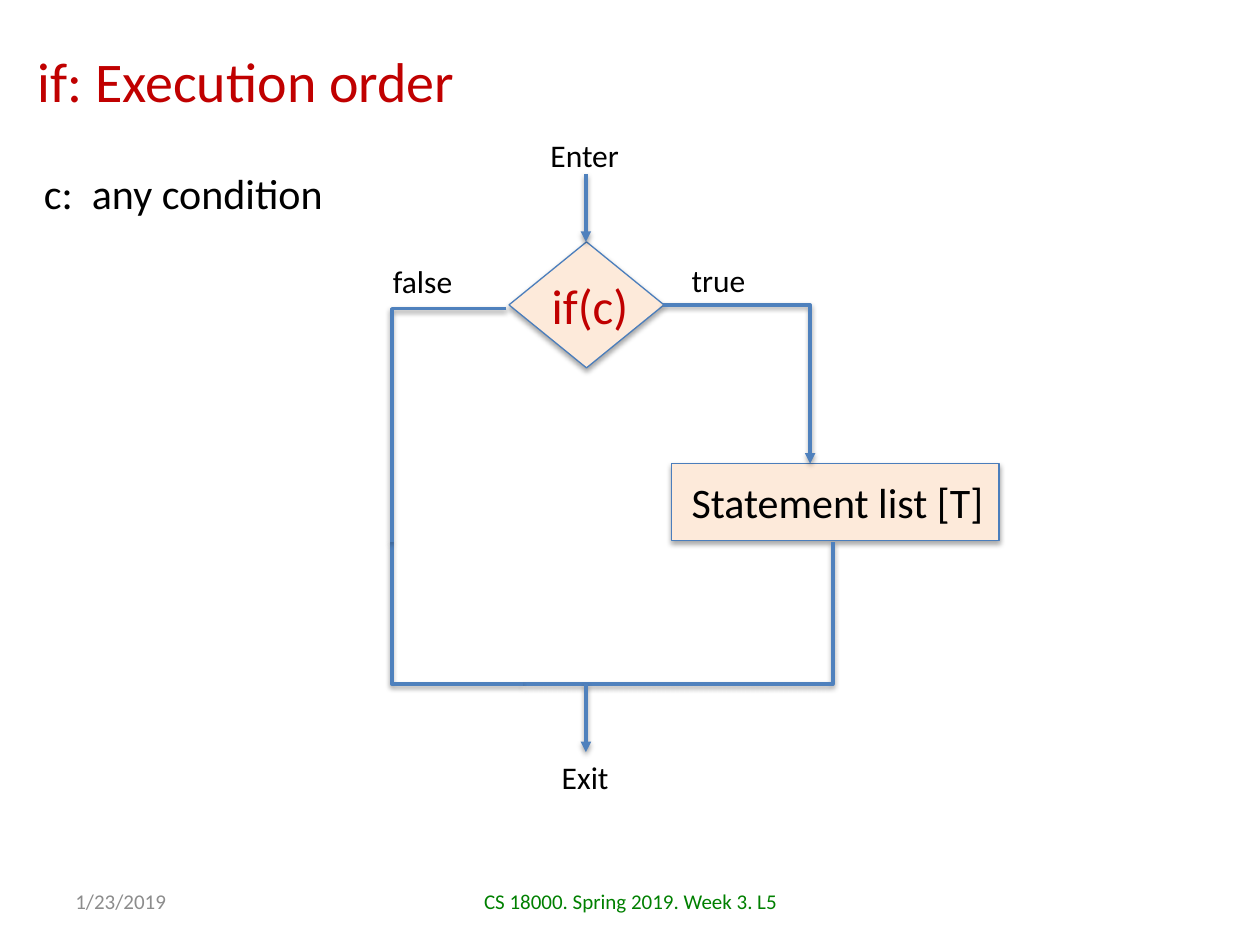
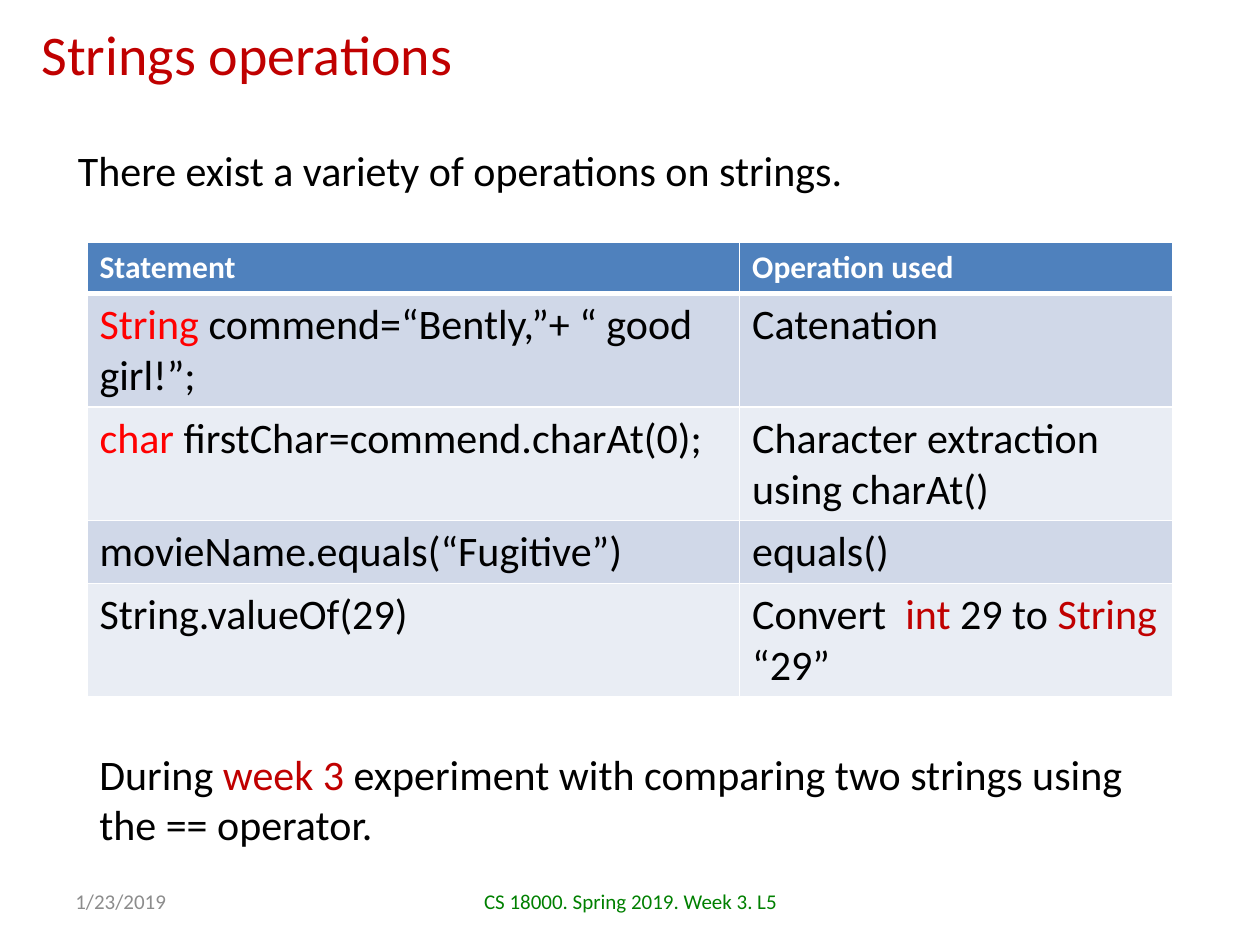
from dataclasses import dataclass
from typing import NamedTuple

from lxml.etree import SubElement
from pptx import Presentation
from pptx.dml.color import RGBColor
from pptx.enum.shapes import MSO_CONNECTOR, MSO_SHAPE
from pptx.enum.text import MSO_ANCHOR, PP_ALIGN
from pptx.oxml.ns import qn
from pptx.util import Inches, Pt

FONT = "Calibri"
BLACK, WHITE, CRIMSON, RED = "000000", "FFFFFF", "C00000", "FF0000"
GREEN, GRAY, BLUE, EDGE, PEACH = "008000", "8C8C8C", "4F81BD", "4B7EBC", "FDEADA"
BANDS = ("D0D8E8", "E9EDF4")


class Span(NamedTuple):
    text: str
    color: str = BLACK


@dataclass(frozen=True)
class Area:
    left: float
    top: float
    width: float
    height: float

    def lengths(self) -> tuple:
        return tuple(Inches(n) for n in (self.left, self.top, self.width, self.height))


@dataclass(frozen=True)
class Label:
    area: Area
    lines: tuple
    size: int
    wrap: bool = True
    align: PP_ALIGN = PP_ALIGN.LEFT
    anchor: MSO_ANCHOR = MSO_ANCHOR.TOP
    spacing: int = 0


@dataclass(frozen=True)
class Node:
    kind: MSO_SHAPE
    area: Area


@dataclass(frozen=True)
class Flow:
    start: tuple
    end: tuple
    bent: bool = False
    arrow: bool = False


def one_line(text: str, color: str = BLACK) -> tuple:
    return ((Span(text, color),),)


FOOTERS = (
    Label(Area(3.42, 6.95, 3.17, 0.4), one_line("CS 18000. Spring 2019. Week 3. L5", GREEN), 12,
          align=PP_ALIGN.CENTER, anchor=MSO_ANCHOR.MIDDLE),
    Label(Area(0.5, 6.95, 2.33, 0.4), one_line("1/23/2019", GRAY), 12, anchor=MSO_ANCHOR.MIDDLE),
)

NODES = (
    Node(MSO_SHAPE.DIAMOND, Area(4.04, 1.92, 1.23, 1)),
    Node(MSO_SHAPE.RECTANGLE, Area(5.33, 3.68, 2.6, 0.61)),
)

FLOWS = (
    Flow((5.26, 2.42), (6.43, 3.68), bent=True, arrow=True),
    Flow((4.15, 5.43), (6.61, 4.3), bent=True),
    Flow((4.65, 5.43), (4.65, 5.97), arrow=True),
    Flow((4.65, 1.38), (4.65, 1.92), arrow=True),
    Flow((4.15, 5.43), (3.11, 4.3), bent=True),
    Flow((4.02, 2.45), (3.11, 4.3), bent=True),
)

FLOW_LABELS = (
    Label(Area(4.28, 2.14, 0.99, 0.57), one_line("if(c)", CRIMSON), 28),
    Label(Area(5.39, 3.73, 2.54, 0.5), one_line("Statement list [T]"), 24, wrap=False),
    Label(Area(0.25, 1.28, 2.68, 0.5), one_line("c:  any condition"), 24),
    Label(Area(5.39, 2.02, 0.63, 0.4), one_line("true"), 18, wrap=False),
    Label(Area(3.02, 2.03, 0.68, 0.4), one_line("false"), 18, wrap=False),
    Label(Area(4.27, 1.03, 0.75, 0.4), one_line("Enter"), 18, wrap=False),
    Label(Area(4.36, 5.97, 0.58, 0.4), one_line("Exit"), 18, wrap=False),
)

STRING_LABELS = (
    Label(Area(0.52, 1.11, 8.97, 0.49),
          one_line("There exist a variety of operations on strings."), 24, spacing=28),
    Label(Area(0.69, 5.89, 8.62, 0.91),
          ((Span("During "), Span("week 3 ", CRIMSON),
            Span("experiment with comparing two strings using")),
           (Span("the == operator."),)), 24),
)

TABLE_AREA = Area(0.69, 1.92, 8.62, 2.05)
COLUMN_WIDTHS = (5.18, 3.44)
OPERATIONS = (
    ((Span("Statement", WHITE),), (Span("Operation used", WHITE),)),
    ((Span("String", RED), Span(" commend=“Bently,”+ “ good girl!”;")), (Span("Catenation"),)),
    ((Span("char ", RED), Span("firstChar=commend.charAt(0);")),
     (Span("Character extraction using charAt()"),)),
    ((Span("movieName.equals(“Fugitive”)"),), (Span("equals()"),)),
    ((Span("String.valueOf(29)"),),
     (Span("Convert  "), Span("int ", CRIMSON), Span("29 to "), Span("String", CRIMSON),
      Span(" “29”"))),
)


def paint(target, color: str) -> None:
    if hasattr(target, "solid"):
        target.solid()
        target = target.fore_color
    target.rgb = RGBColor.from_string(color)


def add_spans(para, spans: tuple, size: int, bold: bool = False) -> None:
    for span in spans:
        run = para.add_run()
        run.text = span.text
        run.font.name = FONT
        run.font.size = Pt(size)
        run.font.bold = bold
        paint(run.font.color, span.color)


def add_label(page, label: Label) -> None:
    frame = page.shapes.add_textbox(*label.area.lengths()).text_frame
    frame.word_wrap = label.wrap
    frame.vertical_anchor = label.anchor
    for index, spans in enumerate(label.lines):
        para = frame.add_paragraph() if index else frame.paragraphs[0]
        para.alignment = label.align
        if label.spacing:
            para.line_spacing = Pt(label.spacing)
        add_spans(para, spans, label.size)


def add_shadow(properties, distance: float, opacity: int) -> None:
    effects = SubElement(properties, qn("a:effectLst"))
    shadow = SubElement(effects, qn("a:outerShdw"), blurRad=str(Pt(3.1)), dist=str(Pt(distance)),
                        dir="5400000", rotWithShape="0")
    color = SubElement(shadow, qn("a:srgbClr"), val=BLACK)
    SubElement(color, qn("a:alpha"), val=str(opacity * 1000))


def add_node(page, node: Node) -> None:
    shape = page.shapes.add_shape(node.kind, *node.area.lengths())
    paint(shape.fill, PEACH)
    paint(shape.line.fill, EDGE)
    shape.line.width = Pt(0.75)
    add_shadow(shape._element.spPr, 1.8, 35)


def add_flow(page, flow: Flow) -> None:
    kind = MSO_CONNECTOR.ELBOW if flow.bent else MSO_CONNECTOR.STRAIGHT
    connector = page.shapes.add_connector(kind, *(Inches(n) for n in flow.start + flow.end))
    paint(connector.line.fill, BLUE)
    connector.line.width = Pt(2)
    properties = connector._element.spPr
    if flow.bent:
        properties.find(qn("a:prstGeom")).set("prst", "bentConnector2")
    if flow.arrow:
        SubElement(properties.find(qn("a:ln")), qn("a:tailEnd"), type="triangle")
    add_shadow(properties, 1.6, 38)


def add_borders(cell, top: float, bottom: float) -> None:
    properties = cell._tc.get_or_add_tcPr()
    for side, width in (("L", 1), ("R", 1), ("T", top), ("B", bottom)):
        line = SubElement(properties, qn(f"a:ln{side}"), w=str(Pt(width)))
        fill = SubElement(line, qn("a:solidFill"))
        SubElement(fill, qn("a:srgbClr"), val=WHITE)


def add_operations_table(page) -> None:
    table = page.shapes.add_table(len(OPERATIONS), len(COLUMN_WIDTHS),
                                  *TABLE_AREA.lengths()).table
    for column, width in zip(table.columns, COLUMN_WIDTHS):
        column.width = Inches(width)
    for row, entries in enumerate(OPERATIONS):
        header = row == 0
        for column, spans in enumerate(entries):
            cell = table.cell(row, column)
            add_borders(cell, 3 if row == 1 else 1, 3 if header else 1)
            paint(cell.fill, BLUE if header else BANDS[(row - 1) % 2])
            add_spans(cell.text_frame.paragraphs[0], spans, 18 if header else 24, header)


def add_page(deck, title: str, area: Area):
    page = deck.slides.add_slide(deck.slide_layouts[5])
    box = page.shapes.title
    box.left, box.top, box.width, box.height = area.lengths()
    box.text_frame.vertical_anchor = MSO_ANCHOR.MIDDLE
    para = box.text_frame.paragraphs[0]
    para.alignment = PP_ALIGN.LEFT
    add_spans(para, (Span(title, CRIMSON),), 32)
    for footer in FOOTERS:
        add_label(page, footer)
    return page


def main() -> None:
    deck = Presentation()
    deck.slide_width, deck.slide_height = Inches(10), Inches(7.5)

    page = add_page(deck, "if: Execution order", Area(0.2, 0.25, 8.36, 0.77))
    for node in NODES:
        add_node(page, node)
    for flow in FLOWS:
        add_flow(page, flow)
    for label in FLOW_LABELS:
        add_label(page, label)

    page = add_page(deck, "Strings operations", Area(0.23, 0.1, 4.87, 0.65))
    add_operations_table(page)
    for label in STRING_LABELS:
        add_label(page, label)

    deck.save("out.pptx")


if __name__ == "__main__":
    main()
